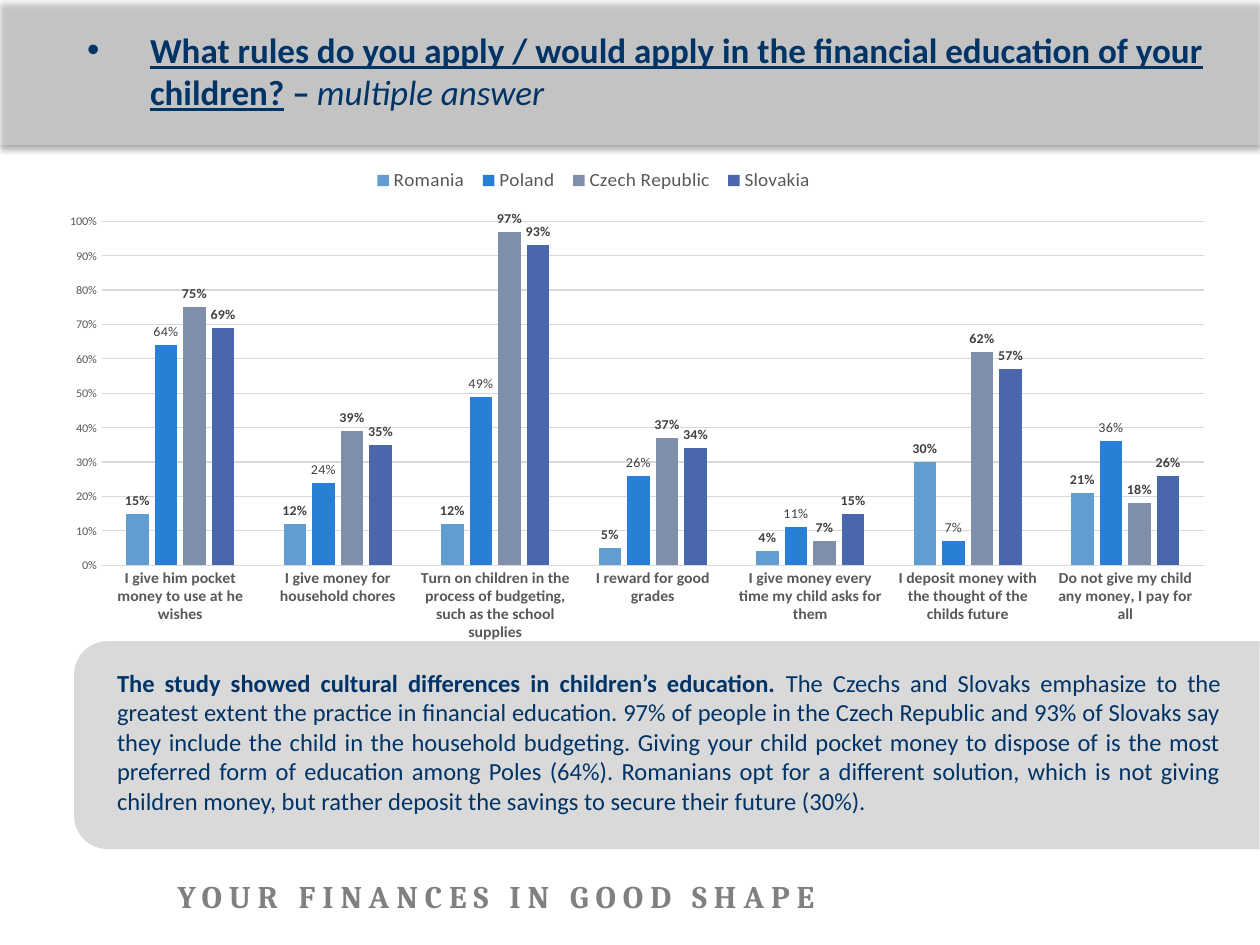
from dataclasses import dataclass

from lxml import etree
from pptx import Presentation
from pptx.chart.data import CategoryChartData
from pptx.dml.color import RGBColor
from pptx.enum.chart import XL_CHART_TYPE, XL_LABEL_POSITION, XL_LEGEND_POSITION, XL_TICK_MARK
from pptx.enum.shapes import MSO_SHAPE
from pptx.enum.text import MSO_ANCHOR, MSO_AUTO_SIZE, PP_ALIGN
from pptx.oxml.ns import qn
from pptx.util import Cm, Pt

CLUSTERED = XL_CHART_TYPE.COLUMN_CLUSTERED
OUTSIDE_END = XL_LABEL_POSITION.OUTSIDE_END
LEGEND_BOTTOM = XL_LEGEND_POSITION.BOTTOM
NO_TICK = XL_TICK_MARK.NONE
RECTANGLE = MSO_SHAPE.RECTANGLE
ROUNDED_SIDE = MSO_SHAPE.ROUND_2_SAME_RECTANGLE
MIDDLE = MSO_ANCHOR.MIDDLE
NO_AUTOFIT = MSO_AUTO_SIZE.NONE
LEFT, JUSTIFY = PP_ALIGN.LEFT, PP_ALIGN.JUSTIFY


@dataclass(frozen=True)
class Theme:
    font: str = "Calibri"
    footer_font: str = "Cambria"
    navy: str = "003366"
    band: str = "F2F2F2"
    panel: str = "D9D9D9"
    grid: str = "D9D9D9"
    axis: str = "595959"
    label: str = "404040"
    footer: str = "808080"
    title_size: float = 20
    footer_size: float = 18
    body_size: float = 14
    legend_size: float = 11
    category_size: float = 9
    label_size: float = 8
    scale_size: float = 7


@dataclass(frozen=True)
class Country:
    name: str
    percents: tuple
    color: str
    bold_labels: bool = True


THEME = Theme()
CATEGORIES = (
    "I give him pocket money to use at he wishes",
    "I give money for household chores",
    "Turn on children in the process of budgeting, such as the school supplies",
    "I reward for good grades",
    "I give money every time my child asks for them",
    "I deposit money with the thought of the childs future",
    "Do not give my child any money, I pay for all",
)
COUNTRIES = (
    Country("Romania", (15, 12, 12, 5, 4, 30, 21), "629DD1"),
    Country("Poland", (64, 24, 49, 26, 11, 7, 36), "297FD5", bold_labels=False),
    Country("Czech Republic", (75, 39, 97, 37, 7, 62, 18), "7F8FA9"),
    Country("Slovakia", (69, 35, 93, 34, 15, 57, 26), "4A66AC"),
)


def add_element(parent, tag: str, **attributes):
    return etree.SubElement(parent, qn(tag), {key: str(value) for key, value in attributes.items()})


def style_font(font, size: float, color: str, bold: bool = False, name: str = THEME.font) -> None:
    font.name, font.size, font.bold = name, Pt(size), bold
    font.color.rgb = RGBColor.from_string(color)


def add_text(paragraph, text: str, *, size: float, color: str = THEME.navy, bold: bool = False,
             italic: bool = False, underline: bool = False, name: str = THEME.font,
             spacing: float = 0) -> None:
    run = paragraph.add_run()
    run.text = text
    style_font(run.font, size, color, bold, name)
    run.font.italic, run.font.underline = italic, underline
    if spacing:
        run.font._element.set("spc", str(round(spacing * 100)))


def add_filled_shape(slide, kind, box: tuple, color: str):
    shape = slide.shapes.add_shape(kind, *map(Cm, box))
    shape.fill.solid()
    shape.fill.fore_color.rgb = RGBColor.from_string(color)
    shape.line.fill.background()
    shape.shadow.inherit = False
    return shape


def add_text_box(slide, box: tuple):
    frame = slide.shapes.add_textbox(*map(Cm, box)).text_frame
    frame.word_wrap = True
    return frame.paragraphs[0]


def add_header_band(slide) -> None:
    band = add_filled_shape(slide, RECTANGLE, (0, 0, 25.4, 2.92), THEME.band)
    properties = band._element.spPr
    add_element(properties.find(".//" + qn("a:srgbClr")), "a:alpha", val=32000)
    shadow = add_element(properties.find(qn("a:effectLst")), "a:outerShdw", blurRad=Pt(3.5),
                         dist=Pt(2.2), dir=5400000, algn="t", rotWithShape=0)
    add_element(add_element(shadow, "a:srgbClr", val="000000"), "a:alpha", val=32000)
    # The band lies behind the title placeholder
    slide.shapes._spTree.insert(2, band._element)


def fill_title(slide) -> None:
    title = slide.shapes.title
    title.left, title.top, title.width, title.height = map(Cm, (1.5, 0.53, 23.6, 1.8))
    frame = title.text_frame
    frame.auto_size, frame.vertical_anchor = NO_AUTOFIT, MIDDLE
    paragraph = frame.paragraphs[0]
    paragraph.alignment = LEFT
    properties = paragraph._p.get_or_add_pPr()
    properties.set("marL", str(Cm(1.27)))
    properties.set("indent", str(-Cm(1.27)))
    add_element(properties, "a:buFont", typeface="Arial")
    add_element(properties, "a:buChar", char="•")
    size = THEME.title_size
    add_text(paragraph, "What rules do you apply / would apply in the financial education of your children?",
             size=size, bold=True, underline=True)
    add_text(paragraph, " ", size=size, bold=True)
    add_text(paragraph, "– ", size=size, bold=True, spacing=-0.4)
    add_text(paragraph, "multiple answer", size=size, italic=True)


def set_layout(parent, position: int, x: float, y: float, w: float, h: float, inner: bool = False) -> None:
    for old in parent.findall(qn("c:layout")):
        parent.remove(old)
    layout = etree.Element(qn("c:layout"))
    manual = add_element(layout, "c:manualLayout")
    if inner:
        add_element(manual, "c:layoutTarget", val="inner")
    for mode in ("xMode", "yMode"):
        add_element(manual, f"c:{mode}", val="edge")
    for key, value in (("x", x), ("y", y), ("w", w), ("h", h)):
        add_element(manual, f"c:{key}", val=value)
    parent.insert(position, layout)


def add_rules_chart(slide) -> None:
    data = CategoryChartData(number_format="0%")
    data.categories = CATEGORIES
    for country in COUNTRIES:
        data.add_series(country.name, [percent / 100 for percent in country.percents])
    chart = slide.shapes.add_chart(CLUSTERED, *map(Cm, (1.22, 3.12, 23.62, 9.8)), data).chart
    style_font(chart.font, THEME.scale_size, "000000")
    chart.has_title = False

    # Columns and their labels
    plot = chart.plots[0]
    plot.gap_width, plot.overlap, plot.vary_by_categories = 219, -27, False
    for series, country in zip(plot.series, COUNTRIES):
        series.format.fill.solid()
        series.format.fill.fore_color.rgb = RGBColor.from_string(country.color)
        labels = series.data_labels
        labels.show_value, labels.position = True, OUTSIDE_END
        labels.number_format, labels.number_format_is_linked = "0%", False
        style_font(labels.font, THEME.label_size, THEME.label, country.bold_labels)

    # Axes
    categories, values = chart.category_axis, chart.value_axis
    for axis in (categories, values):
        axis.major_tick_mark = axis.minor_tick_mark = NO_TICK
    style_font(categories.tick_labels.font, THEME.category_size, THEME.axis, True)
    style_font(values.tick_labels.font, THEME.scale_size, THEME.axis)
    values.minimum_scale, values.maximum_scale, values.major_unit = 0, 1, 0.1
    values.tick_labels.number_format = "0%"
    values.tick_labels.number_format_is_linked = False
    values.format.line.fill.background()
    for line in (categories.format.line, values.major_gridlines.format.line):
        line.color.rgb = RGBColor.from_string(THEME.grid)
        line.width = Pt(0.75)

    # Legend above the plot
    chart.has_legend = True
    legend = chart.legend
    legend.position, legend.include_in_layout = LEGEND_BOTTOM, False
    style_font(legend.font, THEME.legend_size, THEME.axis)
    set_layout(legend._element, 1, 0.26, 0.02, 0.39, 0.07)
    set_layout(chart._chartSpace.chart.plotArea, 0, 0.035, 0.142, 0.941, 0.733, inner=True)


def add_findings(slide) -> None:
    # Turned so that the rounded side faces left
    panel = add_filled_shape(slide, ROUNDED_SIDE, (11.35, 3.07, 4.19, 23.9), THEME.panel)
    panel.adjustments[0], panel.adjustments[1] = 0.16, 0
    panel.rotation = 270
    paragraph = add_text_box(slide, (2.11, 13.34, 22.76, 3.2))
    paragraph.alignment, paragraph.space_after = JUSTIFY, Pt(6)
    add_text(paragraph, "The study showed cultural differences in children’s education. ",
             size=THEME.body_size, bold=True)
    add_text(paragraph, "The Czechs and Slovaks emphasize to the greatest extent the practice in financial "
             "education. 97% of people in the Czech Republic and 93% of Slovaks say they include the child in "
             "the household budgeting. Giving your child pocket money to dispose of is the most preferred form "
             "of education among Poles (64%). Romanians opt for a different solution, which is not giving "
             "children money, but rather deposit the savings to secure their future (30%).",
             size=THEME.body_size)


def main() -> None:
    presentation = Presentation()
    presentation.slide_width, presentation.slide_height = Cm(25.4), Cm(19.05)
    slide = presentation.slides.add_slide(presentation.slide_layouts.get_by_name("Title Only"))
    add_header_band(slide)
    add_text(add_text_box(slide, (3.33, 17.55, 18.39, 1.32)), "YOUR FINANCES IN GOOD SHAPE",
             size=THEME.footer_size, color=THEME.footer, bold=True, name=THEME.footer_font, spacing=4)
    fill_title(slide)
    add_findings(slide)
    add_rules_chart(slide)
    presentation.save("out.pptx")


if __name__ == "__main__":
    main()
